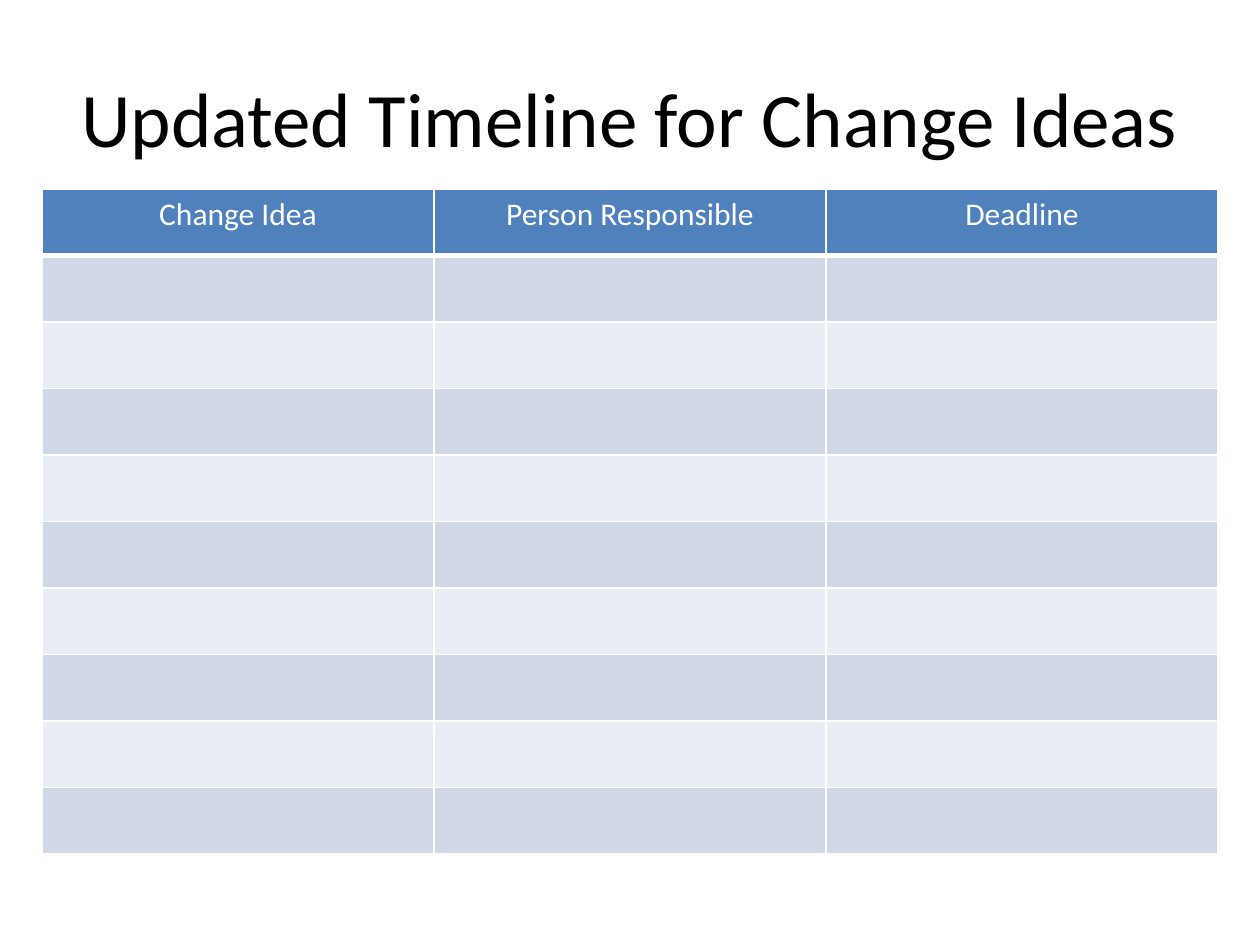
"""Build a slide with an empty timeline table for change ideas."""
from lxml import etree
from pptx import Presentation
from pptx.dml.color import RGBColor
from pptx.enum import text
from pptx.oxml import ns
from pptx.util import Pt

BLACK = RGBColor(0x00, 0x00, 0x00)
WHITE = RGBColor(0xFF, 0xFF, 0xFF)
HEADER_BLUE = RGBColor(0x4F, 0x81, 0xBD)
BANDS = [RGBColor(0xE9, 0xED, 0xF4), RGBColor(0xD0, 0xD8, 0xE8)]
HEADINGS = ["Change Idea", "Person Responsible", "Deadline"]
ROWS = 10


def style_text(frame, size, color):
    para = frame.paragraphs[0]
    para.alignment = text.PP_ALIGN.CENTER
    font = para.runs[0].font
    font.name, font.size, font.bold = "Calibri", Pt(size), False
    font.color.rgb = color


def add_borders(cell, bottom_width):
    properties = cell._tc.get_or_add_tcPr()
    widths = {"lnL": 1, "lnR": 1, "lnT": 1, "lnB": bottom_width}
    for position, (side, width) in enumerate(widths.items()):
        line = etree.Element(ns.qn("a:" + side), w=str(Pt(width)))
        fill = etree.SubElement(line, ns.qn("a:solidFill"))
        etree.SubElement(fill, ns.qn("a:srgbClr"), val=str(WHITE))
        properties.insert(position, line)


deck = Presentation()
deck.slide_width, deck.slide_height = Pt(720), Pt(540)
page = deck.slides.add_slide(deck.slide_layouts[6])

title = page.shapes.add_textbox(Pt(36), Pt(21.6), Pt(648), Pt(90)).text_frame
title.word_wrap = True
title.vertical_anchor = text.MSO_ANCHOR.MIDDLE
title.text = "Updated Timeline for Change Ideas"
style_text(title, 44, BLACK)

table = page.shapes.add_table(
    ROWS, len(HEADINGS), Pt(24), Pt(108), Pt(672), Pt(380)).table
for row_index, row in enumerate(table.rows):
    is_header = row_index == 0
    for cell in row.cells:
        cell.fill.solid()
        cell.fill.fore_color.rgb = HEADER_BLUE if is_header else BANDS[row_index % 2]
        add_borders(cell, 3 if is_header else 1)

for cell, heading in zip(table.rows[0].cells, HEADINGS):
    cell.text_frame.text = heading
    style_text(cell.text_frame, 18, WHITE)

deck.save("out.pptx")
